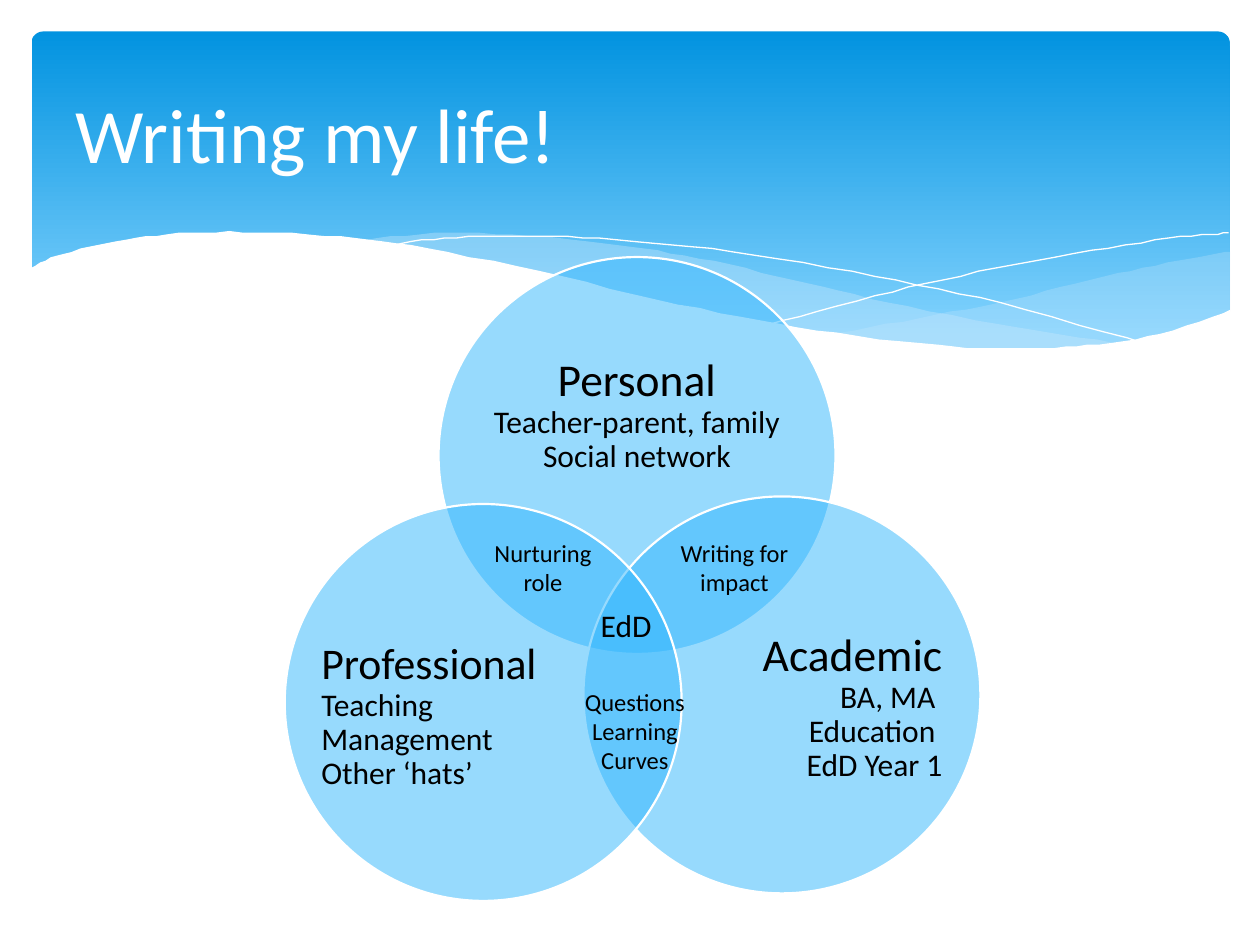
"""Build the "Writing my life!" slide: a wave header above a three-circle Venn diagram."""
from dataclasses import dataclass

from lxml import etree
from pptx import Presentation
from pptx.dml.color import RGBColor
from pptx.enum import shapes, text
from pptx.oxml import ns
from pptx.util import Pt

WHITE = RGBColor(0xFF, 0xFF, 0xFF)
BLACK = RGBColor(0x00, 0x00, 0x00)
HEADER_TOP = RGBColor(0x02, 0x93, 0xE0)
HEADER_BOTTOM = RGBColor(0x83, 0xD3, 0xFE)
WAVE_BLUE = RGBColor(0xC6, 0xE7, 0xFC)
CIRCLE_BLUE = RGBColor(0x31, 0xB6, 0xFD)
FONT = "Calibri"
DIAMETER = 226.8
CURVE_STEPS = 6

Point = tuple[float, float]
Box = tuple[float, float, float, float]


@dataclass(frozen=True)
class Topic:
    left: float
    top: float
    text_box: Box
    alignment: text.PP_ALIGN
    heading: str
    heading_size: float
    details: tuple[str, ...]


@dataclass(frozen=True)
class Overlap:
    box: Box
    lines: tuple[str, ...]
    size: float = 14
    alignment: text.PP_ALIGN = text.PP_ALIGN.CENTER


@dataclass(frozen=True)
class Wave:
    edges: tuple[tuple[Point, ...], ...]
    color: RGBColor
    opacity: int = 100


RIGHT_WAVE = Wave((
    ((702.7, 144), (673, 149), (631, 158), (580, 170.6), (525, 182), (476, 190.8)),
    ((476, 190.8), (527, 197.3), (579, 200), (628, 197.5), (668, 190), (702.7, 177.8)),
), WAVE_BLUE, 29)

MIDDLE_WAVE = Wave((
    ((643, 196.6), (581, 187.2), (508, 172.8), (453, 159.8), (399.6, 147.6),
     (352, 139.7), (302, 134.6), (247.7, 133.4), (206, 137.5)),
    ((206, 137.5), (261, 146.2), (323, 159.8), (382, 172.8), (456, 188),
     (520, 197.3), (573, 200.2), (610, 199.4), (643, 196.6)),
), WAVE_BLUE, 40)

FALLING_LINE = ((222.5, 140.4), (254, 136), (299.5, 134.6), (352, 136.8),
                (419, 144), (500, 157.7), (572, 173.5), (653, 195.8))
RISING_LINE = ((441.4, 185), (500, 169.2), (559, 155.5), (623.5, 143.3),
               (675, 135.4), (702, 133.2))

WHITE_WAVE = Wave((
    ((703.4, 177.1), (662.4, 190.8), (621.4, 197.3), (582.5, 199.4), (535.7, 197.3),
     (466.6, 188.6), (399.6, 176.4), (321.8, 158.4), (244.8, 141.8), (195.1, 135.4),
     (139, 132.5), (95, 133.9), (61.2, 139), (33.1, 146.2), (16.6, 153.4)),
    ((16.6, 236.9), (703.4, 236.9)),
), WHITE)

TOPICS = (
    Topic(250.6, 146.9, (280.8, 186.5, 166.3, 102.2), text.PP_ALIGN.CENTER,
          "Personal", 26, ("Teacher-parent, family", "Social network")),
    Topic(333.4, 283.7, (402.5, 342, 136.1, 124.6), text.PP_ALIGN.RIGHT,
          "Academic", 26, ("BA, MA ", "Education ", "EdD Year 1")),
    Topic(162.7, 288, (183.6, 347, 136.1, 124.6), text.PP_ALIGN.LEFT,
          "Professional", 25, ("Teaching Management", "Other ‘hats’")),
)

OVERLAPS = (
    Overlap((336.2, 342.6, 59.8, 29), ("EdD",), 18, text.PP_ALIGN.LEFT),
    Overlap((265.7, 303.8, 89.3, 41), ("Nurturing role",)),
    Overlap((318.2, 388.8, 89.3, 58.3), ("Questions", "Learning Curves")),
    Overlap((375.1, 303.8, 89.3, 41), ("Writing for impact",)),
)


def smooth(points: tuple[Point, ...]) -> list[Point]:
    """Return points along a Catmull-Rom curve through the given points."""
    padded = (points[0], *points, points[-1])
    curve = [points[0]]
    for a, b, c, d in zip(padded, padded[1:], padded[2:], padded[3:]):
        for step in range(1, CURVE_STEPS + 1):
            t = step / CURVE_STEPS
            curve.append(tuple(
                q + t * (r - p + t * (2 * p - 5 * q + 4 * r - s + t * (3 * q - p - 3 * r + s))) / 2
                for p, q, r, s in zip(a, b, c, d)))
    return curve


def add_outline(slide, points: list[Point], close: bool):
    """Draw a freeform through points and return it."""
    builder = slide.shapes.build_freeform(*points[0], scale=Pt(1))
    builder.add_line_segments(points[1:], close=close)
    shape = builder.convert_to_shape()
    shape.shadow.inherit = False
    return shape


def fill_solid(shape, color: RGBColor, opacity: int) -> None:
    """Fill a shape with a colour at an opacity in percent."""
    shape.fill.solid()
    shape.fill.fore_color.rgb = color
    if opacity < 100:
        color_element = shape.element.spPr.find(ns.qn("a:solidFill"))[0]
        etree.SubElement(color_element, ns.qn("a:alpha"), val=str(opacity * 1000))


def add_wave(slide, wave: Wave) -> None:
    """Draw a filled wave."""
    points = [point for edge in wave.edges for point in smooth(edge)]
    shape = add_outline(slide, points, close=True)
    fill_solid(shape, wave.color, wave.opacity)
    shape.line.fill.background()


def add_wave_line(slide, points: tuple[Point, ...]) -> None:
    """Draw a white hairline curve."""
    shape = add_outline(slide, smooth(points), close=False)
    shape.fill.background()
    shape.line.color.rgb = WHITE
    shape.line.width = Pt(0)


def add_header(slide) -> None:
    """Draw the gradient header panel."""
    shape = slide.shapes.add_shape(
        shapes.MSO_SHAPE.ROUNDED_RECTANGLE, Pt(18), Pt(18), Pt(684.7), Pt(194.4))
    shape.adjustments[0] = 0.034
    shape.shadow.inherit = False
    shape.line.fill.background()
    shape.fill.gradient()
    shape.fill.gradient_angle = 270
    stops = ((0, HEADER_TOP), (0.9, HEADER_BOTTOM))
    for stop, (position, color) in zip(shape.fill.gradient_stops, stops):
        stop.position = position
        stop.color.rgb = color


def add_text(slide, box: Box, lines: tuple[tuple[str, float], ...], alignment: text.PP_ALIGN):
    """Add a text box of (wording, size) lines and return its frame."""
    frame = slide.shapes.add_textbox(*map(Pt, box)).text_frame
    frame.word_wrap = True
    for index, (wording, size) in enumerate(lines):
        paragraph = frame.add_paragraph() if index else frame.paragraphs[0]
        paragraph.text = wording
        paragraph.alignment = alignment
        paragraph.font.name = FONT
        paragraph.font.size = Pt(size)
        paragraph.font.color.rgb = BLACK
    return frame


def add_topic(slide, topic: Topic) -> None:
    """Draw one Venn circle and its text."""
    circle = slide.shapes.add_shape(
        shapes.MSO_SHAPE.OVAL, *map(Pt, (topic.left, topic.top, DIAMETER, DIAMETER)))
    circle.shadow.inherit = False
    fill_solid(circle, CIRCLE_BLUE, 50)
    circle.line.color.rgb = WHITE
    circle.line.width = Pt(1.25)
    lines = ((topic.heading, topic.heading_size), *((detail, 18) for detail in topic.details))
    frame = add_text(slide, topic.text_box, lines, topic.alignment)
    frame.vertical_anchor = text.MSO_ANCHOR.MIDDLE
    frame.margin_left = frame.margin_right = frame.margin_top = frame.margin_bottom = 0
    for paragraph in frame.paragraphs:
        paragraph.line_spacing = 0.9


def set_title(slide) -> None:
    """Fill the title placeholder and bring it to the front."""
    title = slide.shapes.title
    title.left, title.top, title.width, title.height = map(Pt, (36, 26.6, 648, 98.6))
    title.text_frame.text = "Writing my life!"
    title.text_frame.vertical_anchor = text.MSO_ANCHOR.MIDDLE
    paragraph = title.text_frame.paragraphs[0]
    paragraph.alignment = text.PP_ALIGN.LEFT
    paragraph.font.name = FONT
    paragraph.font.size = Pt(44)
    paragraph.font.color.rgb = WHITE
    title.element.getparent().append(title.element)


def main() -> None:
    """Build and save the presentation."""
    presentation = Presentation()
    presentation.slide_width, presentation.slide_height = Pt(720), Pt(540)
    slide = presentation.slides.add_slide(presentation.slide_layouts[5])
    add_header(slide)
    add_wave(slide, RIGHT_WAVE)
    add_wave(slide, MIDDLE_WAVE)
    add_wave_line(slide, FALLING_LINE)
    add_wave_line(slide, RISING_LINE)
    add_wave(slide, WHITE_WAVE)
    for topic in TOPICS:
        add_topic(slide, topic)
    for overlap in OVERLAPS:
        lines = tuple((line, overlap.size) for line in overlap.lines)
        add_text(slide, overlap.box, lines, overlap.alignment)
    set_title(slide)
    presentation.save("out.pptx")


if __name__ == "__main__":
    main()
